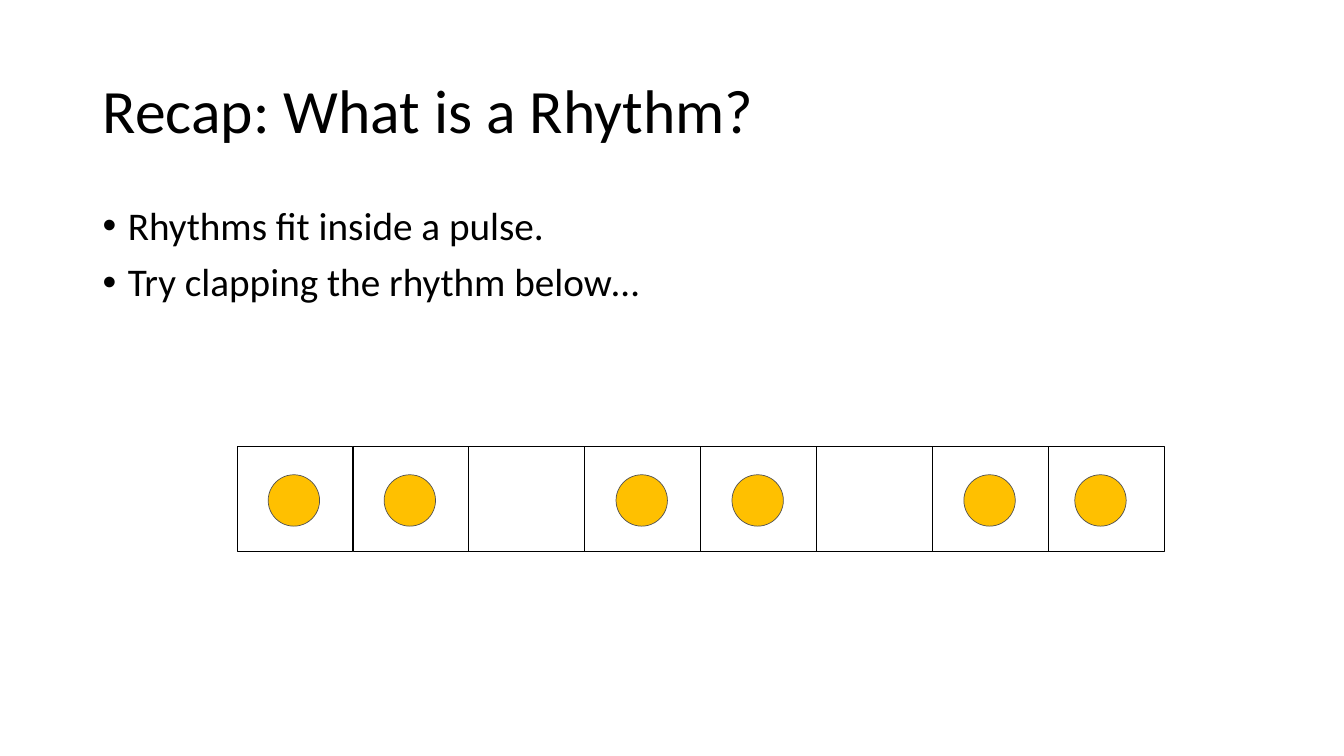
from dataclasses import dataclass

from lxml.etree import SubElement
from pptx import Presentation
from pptx.dml.color import RGBColor
from pptx.enum.shapes import MSO_SHAPE
from pptx.enum.text import MSO_ANCHOR, PP_ALIGN
from pptx.oxml.ns import qn
from pptx.util import Inches, Pt


@dataclass(frozen=True)
class Theme:
    font: str = "Calibri"
    text: str = "000000"
    box_line: str = "000000"
    beat_fill: str = "FFC000"
    beat_line: str = "525252"
    title_size: int = 44
    body_size: int = 28
    line_width: float = 0.5


def write(p, text, size, color, font, space_before=0):
    p.alignment = PP_ALIGN.LEFT
    p.line_spacing = 0.9
    p.space_before = Pt(space_before)
    r = p.add_run()
    r.text = text
    r.font.size = Pt(size)
    r.font.name = font
    r.font.color.rgb = RGBColor.from_string(color)


def add_bullet(p, indent=0.25):
    pPr = p._p.get_or_add_pPr()
    pPr.set("marL", str(Inches(indent)))
    pPr.set("indent", str(-Inches(indent)))
    SubElement(pPr, qn("a:buFont")).set("typeface", "Arial")
    SubElement(pPr, qn("a:buChar")).set("char", "•")


class SlideBuilder:
    def __init__(self, prs, theme):
        self.theme = theme
        self.s = prs.slides.add_slide(prs.slide_layouts[5])

    def title(self, text, left, top, width, height):
        sp = self.s.shapes.title
        sp.left, sp.top = Inches(left), Inches(top)
        sp.width, sp.height = Inches(width), Inches(height)
        tf = sp.text_frame
        tf.word_wrap = True
        tf.vertical_anchor = MSO_ANCHOR.MIDDLE
        t = self.theme
        write(tf.paragraphs[0], text, t.title_size, t.text, t.font)

    def bullets(self, items, left, top, width, height):
        sp = self.s.shapes.add_textbox(Inches(left), Inches(top), Inches(width), Inches(height))
        tf = sp.text_frame
        tf.word_wrap = True
        t = self.theme
        for i, item in enumerate(items):
            p = tf.add_paragraph() if i else tf.paragraphs[0]
            write(p, item, t.body_size, t.text, t.font, space_before=10)
            add_bullet(p)

    def shape(self, kind, left, top, width, height, line, fill=None):
        sp = self.s.shapes.add_shape(kind, Inches(left), Inches(top), Inches(width), Inches(height))
        sp.shadow.inherit = False
        if fill:
            sp.fill.solid()
            sp.fill.fore_color.rgb = RGBColor.from_string(fill)
        else:
            sp.fill.background()
        sp.line.color.rgb = RGBColor.from_string(line)
        sp.line.width = Pt(self.theme.line_width)

    def rhythm(self, beat_insets, left, top, width, height, beat=0.51):
        """Draw a row of boxes; each inset places a beat in its box, None is a rest."""
        t = self.theme
        for i, inset in enumerate(beat_insets):
            x = left + i * width
            self.shape(MSO_SHAPE.RECTANGLE, x, top, width, height, t.box_line)
            if inset is not None:
                self.shape(MSO_SHAPE.OVAL, x + inset, top + 0.28, beat, beat,
                           t.beat_line, t.beat_fill)


def main():
    prs = Presentation()
    prs.slide_width, prs.slide_height = Inches(13.33), Inches(7.5)
    slide = SlideBuilder(prs, Theme())
    slide.title("Recap: What is a Rhythm?", 0.92, 0.4, 11.5, 1.45)
    slide.bullets(["Rhythms fit inside a pulse.", "Try clapping the rhythm below…"],
                  0.92, 2, 11.5, 4.76)
    slide.rhythm([0.31, 0.31, None, 0.31, 0.31, None, 0.31, 0.26], 2.35, 4.43, 1.15, 1.04)
    prs.save("out.pptx")


if __name__ == "__main__":
    main()
